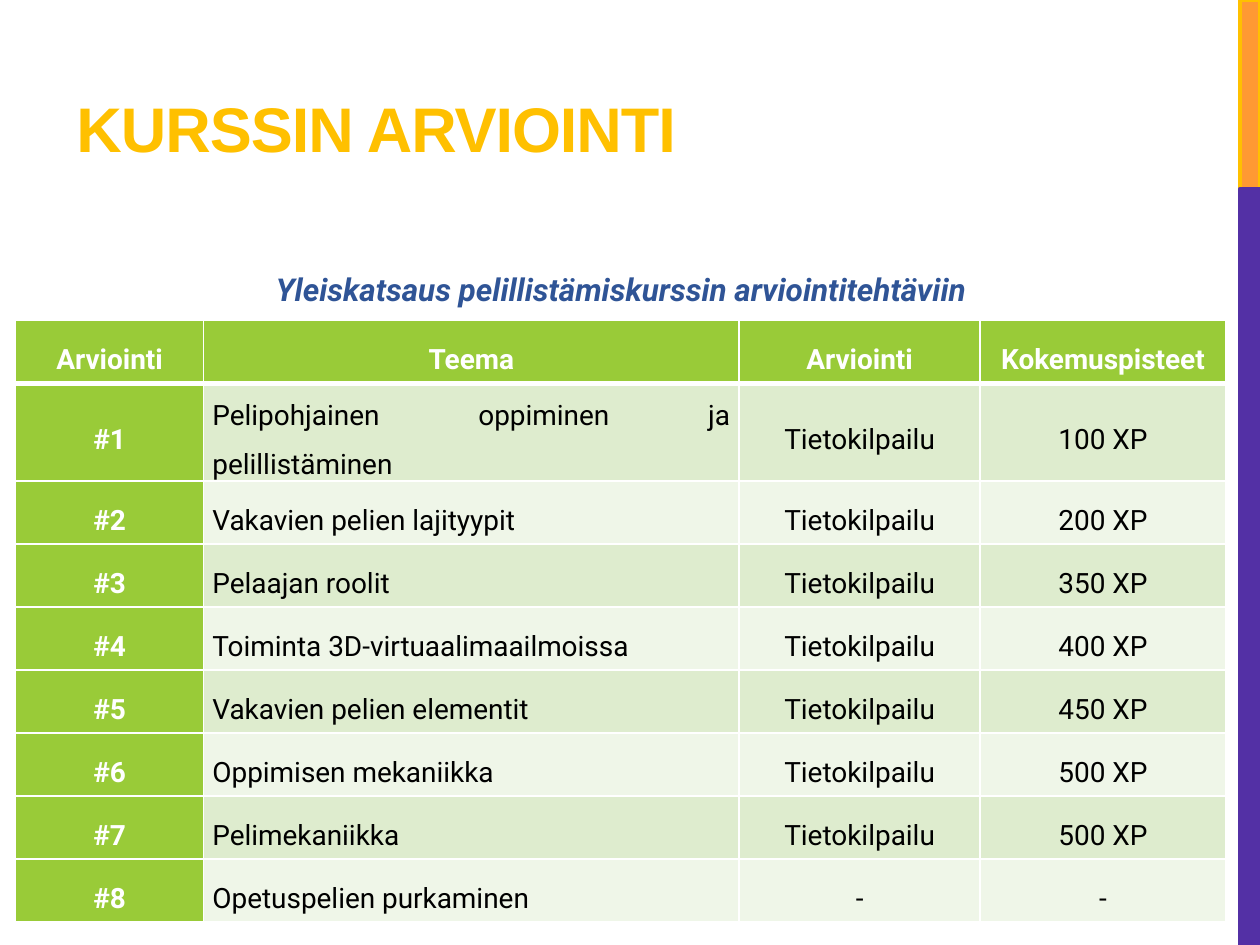
from dataclasses import dataclass
from typing import Any

from lxml import etree
from pptx import Presentation
from pptx import util as u
from pptx.dml.color import RGBColor
from pptx.enum import shapes, text
from pptx.oxml import ns


@dataclass(frozen=True)
class Theme:
    heading_font: str = "Arial"
    body_font: str = "Roboto"
    title_size: float = 36
    caption_size: float = 18
    table_size: float = 16
    gold: str = "FFC000"
    orange: str = "FF9933"
    purple: str = "5330A5"
    blue: str = "2F5496"
    green: str = "99CB38"
    white: str = "FFFFFF"
    black: str = "000000"
    bands: tuple[str, str] = ("DEECCE", "EFF6E8")


@dataclass(frozen=True)
class Box:
    left: float
    top: float
    width: float
    height: float

    def lengths(self) -> list[int]:
        return [u.Pt(value) for value in (self.left, self.top, self.width, self.height)]


@dataclass(frozen=True)
class Bar:
    box: Box
    fill: str
    line: str


@dataclass(frozen=True)
class Assessment:
    theme_name: str
    method: str
    points: str


THEME = Theme()
BARS = (
    Bar(Box(708.5, 0, 11.5, 108), THEME.orange, THEME.gold),
    Bar(Box(708.5, 108, 11.5, 432), THEME.purple, THEME.purple),
)
TITLE_BOX = Box(36.5, 38, 456, 60)
CAPTION_BOX = Box(8.9, 139.7, 692, 36)
TABLE_BOX = Box(8.9, 183, 692, 324)
COLUMN_WIDTHS = (107.5, 306, 137.7, 140.5)
HEADERS = ("Arviointi", "Teema", "Arviointi", "Kokemuspisteet")
QUIZ = "Tietokilpailu"
ASSESSMENTS = (
    Assessment("Pelipohjainen oppiminen ja pelillistäminen", QUIZ, "100 XP"),
    Assessment("Vakavien pelien lajityypit", QUIZ, "200 XP"),
    Assessment("Pelaajan roolit", QUIZ, "350 XP"),
    Assessment("Toiminta 3D-virtuaalimaailmoissa", QUIZ, "400 XP"),
    Assessment("Vakavien pelien elementit", QUIZ, "450 XP"),
    Assessment("Oppimisen mekaniikka", QUIZ, "500 XP"),
    Assessment("Pelimekaniikka", QUIZ, "500 XP"),
    Assessment("Opetuspelien purkaminen", "-", "-"),
)


def apply(target: Any, values: dict[str, Any]) -> None:
    for name, value in values.items():
        setattr(target, name, value)


def write(frame: Any, words: str, color: str, font: dict[str, Any], layout: dict[str, Any]) -> Any:
    paragraph = frame.paragraphs[0]
    apply(paragraph, layout)
    run = paragraph.add_run()
    run.text = words
    apply(run.font, font)
    run.font.color.rgb = RGBColor.from_string(color)
    return run


def draw_bar(slide: Any, bar: Bar) -> None:
    shape = slide.shapes.add_shape(shapes.MSO_SHAPE.RECTANGLE, *bar.box.lengths())
    shape.shadow.inherit = False
    shape.fill.solid()
    shape.fill.fore_color.rgb = RGBColor.from_string(bar.fill)
    shape.line.color.rgb = RGBColor.from_string(bar.line)
    shape.line.width = u.Pt(2.25)


def draw_title(slide: Any) -> None:
    title = slide.shapes.title
    apply(title, dict(zip(("left", "top", "width", "height"), TITLE_BOX.lengths())))
    apply(title.text_frame, {
        "vertical_anchor": text.MSO_ANCHOR.BOTTOM,
        "auto_size": text.MSO_AUTO_SIZE.NONE,
        "word_wrap": True,
    })
    font = {"name": THEME.heading_font, "size": u.Pt(THEME.title_size), "bold": True}
    run = write(title.text_frame, "KURSSIN ARVIOINTI", THEME.gold, font,
                {"alignment": text.PP_ALIGN.LEFT})
    run.font._element.set("spc", "-60")


def draw_caption(slide: Any) -> None:
    frame = slide.shapes.add_textbox(*CAPTION_BOX.lengths()).text_frame
    apply(frame, {"word_wrap": True, "auto_size": text.MSO_AUTO_SIZE.SHAPE_TO_FIT_TEXT})
    font = {"name": THEME.body_font, "size": u.Pt(THEME.caption_size), "bold": True, "italic": True}
    write(frame, "Yleiskatsaus pelillistämiskurssin arviointitehtäviin", THEME.blue, font,
          {"alignment": text.PP_ALIGN.CENTER, "line_spacing": 1.5, "space_after": u.Pt(6)})


def set_borders(cell: Any, widths: dict[str, float]) -> None:
    properties = cell._tc.get_or_add_tcPr()
    for position, (side, width) in enumerate(widths.items()):
        line = etree.Element(ns.qn(f"a:ln{side}"), w=str(u.Pt(width)))
        fill = etree.SubElement(line, ns.qn("a:solidFill"))
        etree.SubElement(fill, ns.qn("a:srgbClr"), val=THEME.white)
        properties.insert(position, line)


def draw_cell(cell: Any, words: str, row: int, column: int) -> None:
    is_heading = row == 0 or column == 0
    is_theme = row > 0 and column == 1
    apply(cell, {
        "vertical_anchor": text.MSO_ANCHOR.MIDDLE,
        "margin_left": u.Pt(5),
        "margin_right": u.Pt(5),
        "margin_top": 0,
        "margin_bottom": 0,
    })
    cell.fill.solid()
    fill = THEME.green if is_heading else THEME.bands[(row - 1) % 2]
    cell.fill.fore_color.rgb = RGBColor.from_string(fill)
    set_borders(cell, {"L": 1, "R": 1, "T": 3 if row == 1 else 1, "B": 3 if row == 0 else 1})
    font = {"name": THEME.body_font, "size": u.Pt(THEME.table_size), "bold": is_heading}
    alignment = text.PP_ALIGN.JUSTIFY if is_theme else text.PP_ALIGN.CENTER
    write(cell.text_frame, words, THEME.white if is_heading else THEME.black, font,
          {"alignment": alignment, "line_spacing": 1.5, "space_after": u.Pt(3)})


def draw_table(slide: Any) -> None:
    rows = [HEADERS] + [
        (f"#{number}", item.theme_name, item.method, item.points)
        for number, item in enumerate(ASSESSMENTS, 1)
    ]
    table = slide.shapes.add_table(len(rows), len(HEADERS), *TABLE_BOX.lengths()).table
    for column, width in zip(table.columns, COLUMN_WIDTHS):
        column.width = u.Pt(width)
    for row, values in enumerate(rows):
        for column, words in enumerate(values):
            draw_cell(table.cell(row, column), words, row, column)


def main() -> None:
    presentation = Presentation()
    apply(presentation, {"slide_width": u.Pt(720), "slide_height": u.Pt(540)})
    slide = presentation.slides.add_slide(presentation.slide_layouts[5])
    for bar in BARS:
        draw_bar(slide, bar)
    draw_title(slide)
    draw_table(slide)
    draw_caption(slide)
    presentation.save("out.pptx")


if __name__ == "__main__":
    main()
